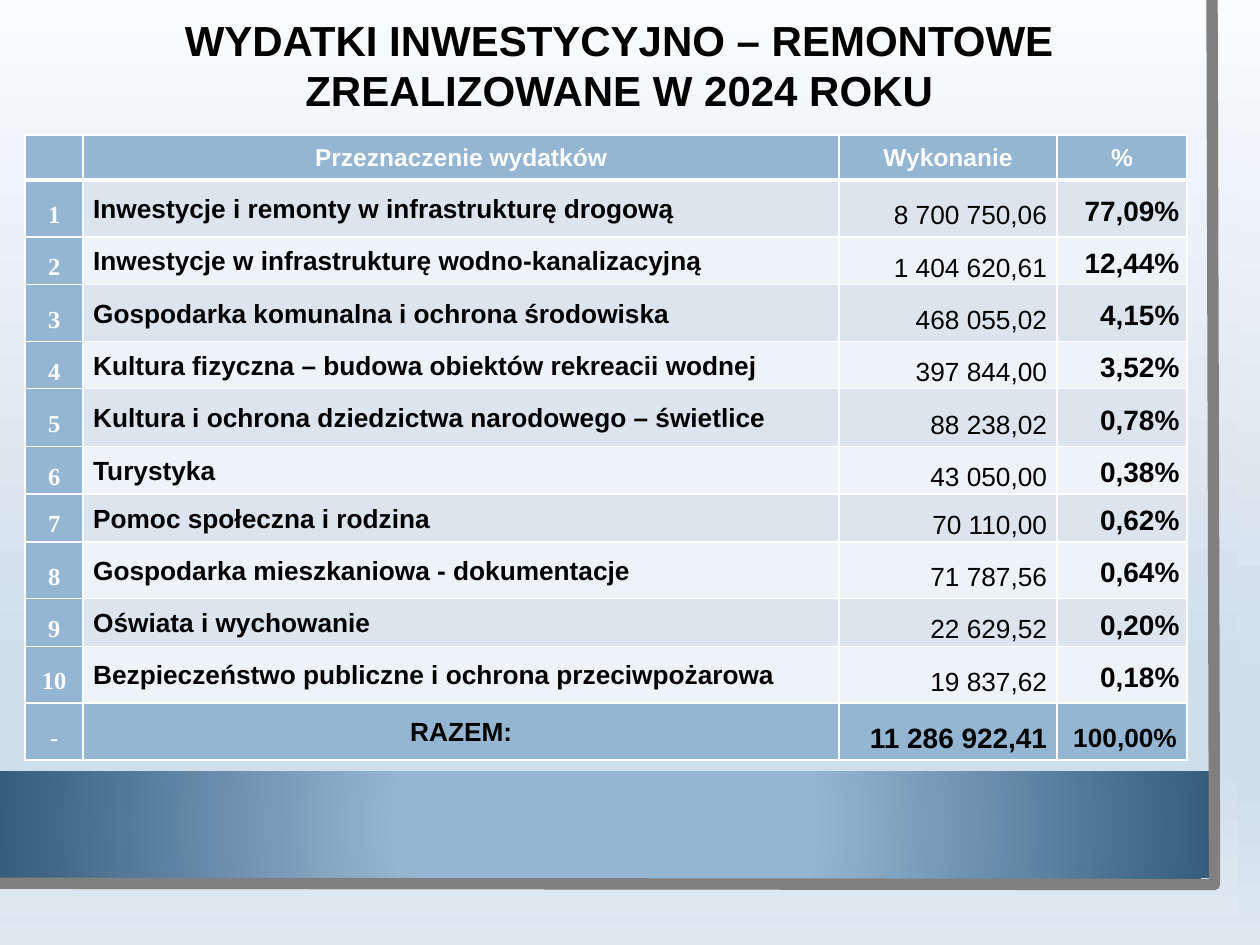
"""Builds a slide with a table of investment and repair spending in 2024."""
from lxml.etree import SubElement
from pptx import Presentation
from pptx.dml.color import RGBColor
from pptx.enum.shapes import MSO_SHAPE
from pptx.enum.text import MSO_ANCHOR, PP_ALIGN
from pptx.oxml.ns import qn
from pptx.util import Inches, Pt

WHITE = RGBColor(0xFF, 0xFF, 0xFF)
BLACK = RGBColor(0x00, 0x00, 0x00)
GRAY = RGBColor(0x80, 0x80, 0x80)
BLUE = RGBColor(0x94, 0xB6, 0xD2)
NAVY = RGBColor(0x35, 0x5D, 0x7E)
BAND = RGBColor(0xDC, 0xE5, 0xEE)
PALE = RGBColor(0xEE, 0xF3, 0xF7)
SKY_TOP = RGBColor(0xFA, 0xFB, 0xFD)
SKY_MIDDLE = RGBColor(0xCF, 0xDE, 0xEB)
SKY_BOTTOM = RGBColor(0xDF, 0xE9, 0xF2)
SKY = [(0, SKY_TOP), (74, SKY_MIDDLE), (83, SKY_MIDDLE), (100, SKY_BOTTOM)]
GLOW = [(34, BLUE), (100, NAVY)]
LEFT, CENTER, RIGHT = PP_ALIGN.LEFT, PP_ALIGN.CENTER, PP_ALIGN.RIGHT


def paint_gradient(fill, element, stops, circular=False):
    fill.gradient()
    gradient = next(element.iter(qn("a:gradFill")))
    for child in list(gradient):
        gradient.remove(child)
    stop_list = SubElement(gradient, qn("a:gsLst"))
    for percent, color in stops:
        stop = SubElement(stop_list, qn("a:gs"), pos=str(percent * 1000))
        SubElement(stop, qn("a:srgbClr"), val=str(color))
    if circular:
        route = SubElement(gradient, qn("a:path"), {"path": "circle"})
        SubElement(route, qn("a:fillToRect"), l="50000", t="50000", r="50000", b="50000")
    else:
        SubElement(gradient, qn("a:lin"), ang="5400000", scaled="0")


def add_text(para, text, size, color, bold=True, font="Arial"):
    span = para.add_run()
    span.text = text
    span.font.name = font
    span.font.size = Pt(size)
    span.font.bold = bold
    span.font.color.rgb = color


deck = Presentation()
deck.slide_width = Inches(10)
deck.slide_height = Inches(7.5)
page = deck.slides.add_slide(deck.slide_layouts[6])
paint_gradient(page.background.fill, page._element, SKY)

for top, width, height, stops, circular in [
    (0, 9.83, 7.27, SKY, False),
    (6.12, 9.6, 0.85, GLOW, True),
]:
    panel = page.shapes.add_shape(
        MSO_SHAPE.RECTANGLE, Inches(0), Inches(top), Inches(width), Inches(height))
    panel.shadow.inherit = False
    panel.line.fill.background()
    paint_gradient(panel.fill, panel._element, stops, circular)

builder = page.shapes.build_freeform(Inches(9.62), Inches(0))
builder.add_line_segments(
    [(Inches(9.64), Inches(7.02)), (Inches(-0.02), Inches(7.01))], close=False)
frame_edge = builder.convert_to_shape()
frame_edge.shadow.inherit = False
frame_edge.fill.background()
frame_edge.line.color.rgb = GRAY
frame_edge.line.width = Pt(6.5)

title = page.shapes.add_textbox(Inches(0.07), Inches(0.06), Inches(9.81), Inches(0.91))
title.text_frame.word_wrap = True
title.text_frame.vertical_anchor = MSO_ANCHOR.MIDDLE
title.text_frame.margin_right = Inches(0.22)
para = title.text_frame.paragraphs[0]
para.alignment = CENTER
add_text(para, "WYDATKI INWESTYCYJNO – REMONTOWE ZREALIZOWANE W 2024 ROKU", 24, BLACK)

spending = [
    ("Inwestycje i remonty w infrastrukturę drogową", "8 700 750,06", "77,09%"),
    ("Inwestycje w infrastrukturę wodno-kanalizacyjną", "1 404 620,61", "12,44%"),
    ("Gospodarka komunalna i ochrona środowiska", "468 055,02", "4,15%"),
    ("Kultura fizyczna – budowa obiektów rekreacii wodnej", "397 844,00", "3,52%"),
    ("Kultura i ochrona dziedzictwa narodowego – świetlice", "88 238,02", "0,78%"),
    ("Turystyka", "43 050,00", "0,38%"),
    ("Pomoc społeczna i rodzina", "70 110,00", "0,62%"),
    ("Gospodarka mieszkaniowa - dokumentacje", "71 787,56", "0,64%"),
    ("Oświata i wychowanie", "22 629,52", "0,20%"),
    ("Bezpieczeństwo publiczne i ochrona przeciwpożarowa", "19 837,62", "0,18%"),
]
rows = [("", "Przeznaczenie wydatków", "Wykonanie", "%")]
rows += [(str(number), *entry) for number, entry in enumerate(spending, 1)]
rows.append(("-", "RAZEM:", "11 286 922,41", "100,00%"))
last = len(rows) - 1

column_widths = [0.46, 6, 1.73, 1.03]
row_heights = [0.36, 0.45, 0.38, 0.45, 0.37, 0.46, 0.37, 0.38, 0.45, 0.38, 0.45, 0.45]

# alignment, line spacing, size, color, bold, font
header_style = (CENTER, 1.07, 14, WHITE, True, "Arial")
number_style = (CENTER, 1.5, 14, WHITE, True, "Times New Roman")
body_styles = [
    number_style,
    (LEFT, 1.07, 15, BLACK, True, "Arial"),
    (RIGHT, 1.5, 15, BLACK, False, "Arial"),
    (RIGHT, 1.15, 16, BLACK, True, "Arial"),
]
total_styles = [
    number_style,
    (CENTER, 1.07, 15, BLACK, True, "Arial"),
    (RIGHT, 1.5, 16, BLACK, True, "Arial"),
    (RIGHT, 1.5, 15, BLACK, True, "Arial"),
]

table = page.shapes.add_table(
    len(rows), len(column_widths), Inches(0.2), Inches(1.07),
    Inches(sum(column_widths)), Inches(sum(row_heights))).table
table.first_row = False
table.horz_banding = False
for column, width in zip(table.columns, column_widths):
    column.width = Inches(width)

for r, (values, height) in enumerate(zip(rows, row_heights)):
    table.rows[r].height = Inches(height)
    for c, value in enumerate(values):
        cell = table.cell(r, c)
        is_share = c == 3 and 0 < r < last
        cell.vertical_anchor = MSO_ANCHOR.MIDDLE
        cell.margin_left = cell.margin_right = Inches(0.06 if is_share else 0.08)
        cell.margin_top = Inches(0.01 if is_share else 0)
        cell.margin_bottom = Inches(0)

        properties = cell._tc.get_or_add_tcPr()
        for side in ("lnL", "lnR", "lnT", "lnB"):
            thick = (r, side) in [(0, "lnB"), (1, "lnT")]
            border = SubElement(properties, qn("a:" + side), w=str(Pt(3 if thick else 1)))
            SubElement(SubElement(border, qn("a:solidFill")), qn("a:srgbClr"), val=str(WHITE))
        cell.fill.solid()
        if c == 0 or r in (0, last):
            cell.fill.fore_color.rgb = BLUE
        else:
            cell.fill.fore_color.rgb = BAND if r % 2 else PALE

        if not value:
            continue
        if r == 0:
            style = header_style
        else:
            style = (total_styles if r == last else body_styles)[c]
        alignment, spacing, size, color, bold, font = style
        para = cell.text_frame.paragraphs[0]
        para.alignment = alignment
        para.line_spacing = spacing
        if is_share:
            para.space_after = Pt(8)
        add_text(para, value, size, color, bold and value != "-", font)

deck.save("out.pptx")
